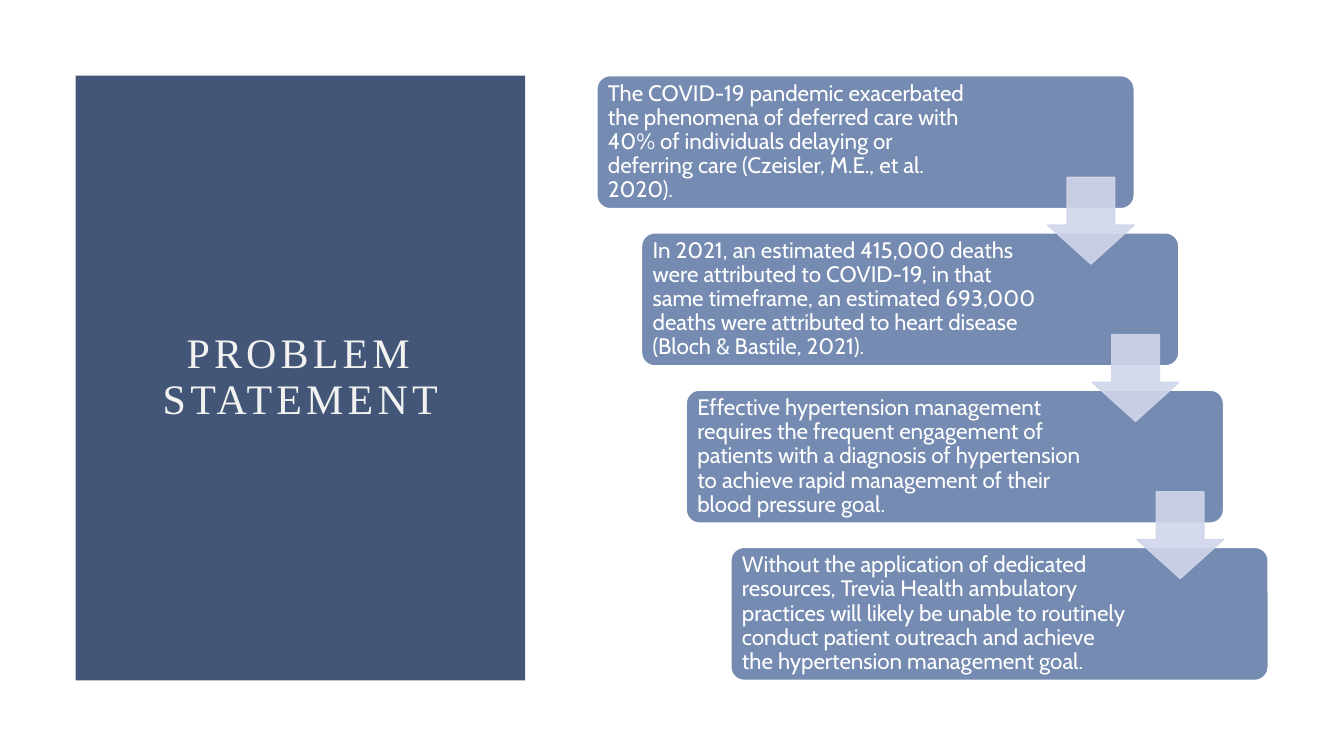
from dataclasses import dataclass

from pptx import Presentation
from pptx.dml.color import RGBColor
from pptx.enum.shapes import MSO_SHAPE
from pptx.enum.text import MSO_ANCHOR, MSO_AUTO_SIZE, PP_ALIGN
from pptx.oxml.ns import qn
from pptx.util import Inches, Pt
from lxml.etree import SubElement


@dataclass(frozen=True)
class Theme:
    """Colours, fonts and type sizes of the slide."""
    panel: RGBColor = RGBColor(0x43, 0x56, 0x77)
    heading: RGBColor = RGBColor(0xF2, 0xF3, 0xF0)
    step: RGBColor = RGBColor(0x75, 0x8B, 0xB1)
    arrow: RGBColor = RGBColor(0xD0, 0xD6, 0xEA)
    white: RGBColor = RGBColor(0xFF, 0xFF, 0xFF)
    heading_font: str = "Times New Roman"
    body_font: str = "Cabin"
    heading_size: Pt = Pt(30)
    body_size: Pt = Pt(16)


THEME = Theme()
STEP_LEFT, STEP_TOP = 5.92, 0.75
STEP_WIDTH, STEP_HEIGHT = 5.33, 1.32
SHIFT_X, SHIFT_Y = 0.443, 1.56
ARROW_SIZE = 0.86
TEXT_GAP = 0.04

STEPS = [
    ("The COVID-19 pandemic exacerbated the phenomena of deferred care with 40% of "
     "individuals delaying or deferring care (Czeisler, M.E., et al. 2020).", 3.8),
    ("In 2021, an estimated 415,000 deaths were attributed to COVID-19, in that same "
     "timeframe, an estimated 693,000 deaths were attributed to heart disease "
     "(Bloch & Bastile, 2021).", 3.95),
    ("Effective hypertension management requires the frequent engagement of patients "
     "with a diagnosis of hypertension to achieve rapid management of their blood "
     "pressure goal.", 3.95),
    ("Without the application of dedicated resources, Trevia Health ambulatory "
     "practices will likely be unable to routinely conduct patient outreach and "
     "achieve the hypertension management goal.", 3.95),
]


def add_block(slide, preset, left, top, width, height, fill, line=None, adjustments=()):
    """Add a flat filled preset shape, outlined if a line colour is given."""
    block = slide.shapes.add_shape(
        preset, Inches(left), Inches(top), Inches(width), Inches(height))
    block.shadow.inherit = False
    block.fill.solid()
    block.fill.fore_color.rgb = fill
    if line is None:
        block.line.fill.background()
    else:
        block.line.color.rgb = line
        block.line.width = Pt(1)
    for index, value in enumerate(adjustments):
        block.adjustments[index] = value
    return block


def style_paragraph(paragraph, font, size, color, align):
    """Set the type, colour, alignment and line spacing of a paragraph."""
    paragraph.font.name = font
    paragraph.font.size = size
    paragraph.font.color.rgb = color
    paragraph.alignment = align
    paragraph.line_spacing = 0.9


def add_heading(slide, text):
    """Fill the title placeholder and put the dark panel behind it."""
    panel = add_block(slide, MSO_SHAPE.RECTANGLE, 0.75, 0.75, 4.46, 6, THEME.panel)
    title = slide.shapes.title
    title._element.addprevious(panel._element)
    title.left, title.top = Inches(1.5), Inches(1.5)
    title.width, title.height = Inches(2.96), Inches(4.5)
    frame = title.text_frame
    frame.text = text
    frame.word_wrap = True
    frame.auto_size = MSO_AUTO_SIZE.NONE
    frame.vertical_anchor = MSO_ANCHOR.MIDDLE
    paragraph = frame.paragraphs[0]
    style_paragraph(paragraph, THEME.heading_font, THEME.heading_size,
                    THEME.heading, PP_ALIGN.CENTER)
    paragraph.runs[0].font._element.set("spc", "300")


def add_step(slide, index, text, text_width):
    """Add one stair of the sequence with its statement."""
    left, top = STEP_LEFT + index * SHIFT_X, STEP_TOP + index * SHIFT_Y
    add_block(slide, MSO_SHAPE.ROUNDED_RECTANGLE, left, top, STEP_WIDTH, STEP_HEIGHT,
              THEME.step, THEME.white, [0.1])
    statement = slide.shapes.add_textbox(
        Inches(left + TEXT_GAP), Inches(top + TEXT_GAP),
        Inches(text_width), Inches(STEP_HEIGHT - 2 * TEXT_GAP))
    frame = statement.text_frame
    frame.word_wrap = True
    frame.vertical_anchor = MSO_ANCHOR.MIDDLE
    frame.margin_left = frame.margin_right = Inches(0.07)
    frame.margin_top = frame.margin_bottom = Inches(0.07)
    frame.text = text
    style_paragraph(frame.paragraphs[0], THEME.body_font, THEME.body_size,
                    THEME.white, PP_ALIGN.LEFT)


def add_step_arrow(slide, index):
    """Add the translucent arrow from one stair to the next."""
    left = STEP_LEFT + STEP_WIDTH - ARROW_SIZE + index * SHIFT_X
    arrow = add_block(slide, MSO_SHAPE.DOWN_ARROW, left, 1.76 + index * SHIFT_Y,
                      ARROW_SIZE, ARROW_SIZE, THEME.arrow, THEME.arrow, [0.45, 0.55])
    for color in arrow._element.spPr.iter(qn("a:srgbClr")):
        SubElement(color, qn("a:alpha"), val="90000")
    arrow.adjustments[0], arrow.adjustments[1] = 0.55, 0.45


def main():
    """Build and save the slide."""
    presentation = Presentation()
    presentation.slide_width = Inches(13.33)
    presentation.slide_height = Inches(7.5)
    slide = presentation.slides.add_slide(presentation.slide_layouts[5])
    add_heading(slide, "PROBLEM STATEMENT")
    for index, (text, text_width) in enumerate(STEPS):
        add_step(slide, index, text, text_width)
    for index in range(len(STEPS) - 1):
        add_step_arrow(slide, index)
    presentation.save("out.pptx")


if __name__ == "__main__":
    main()
